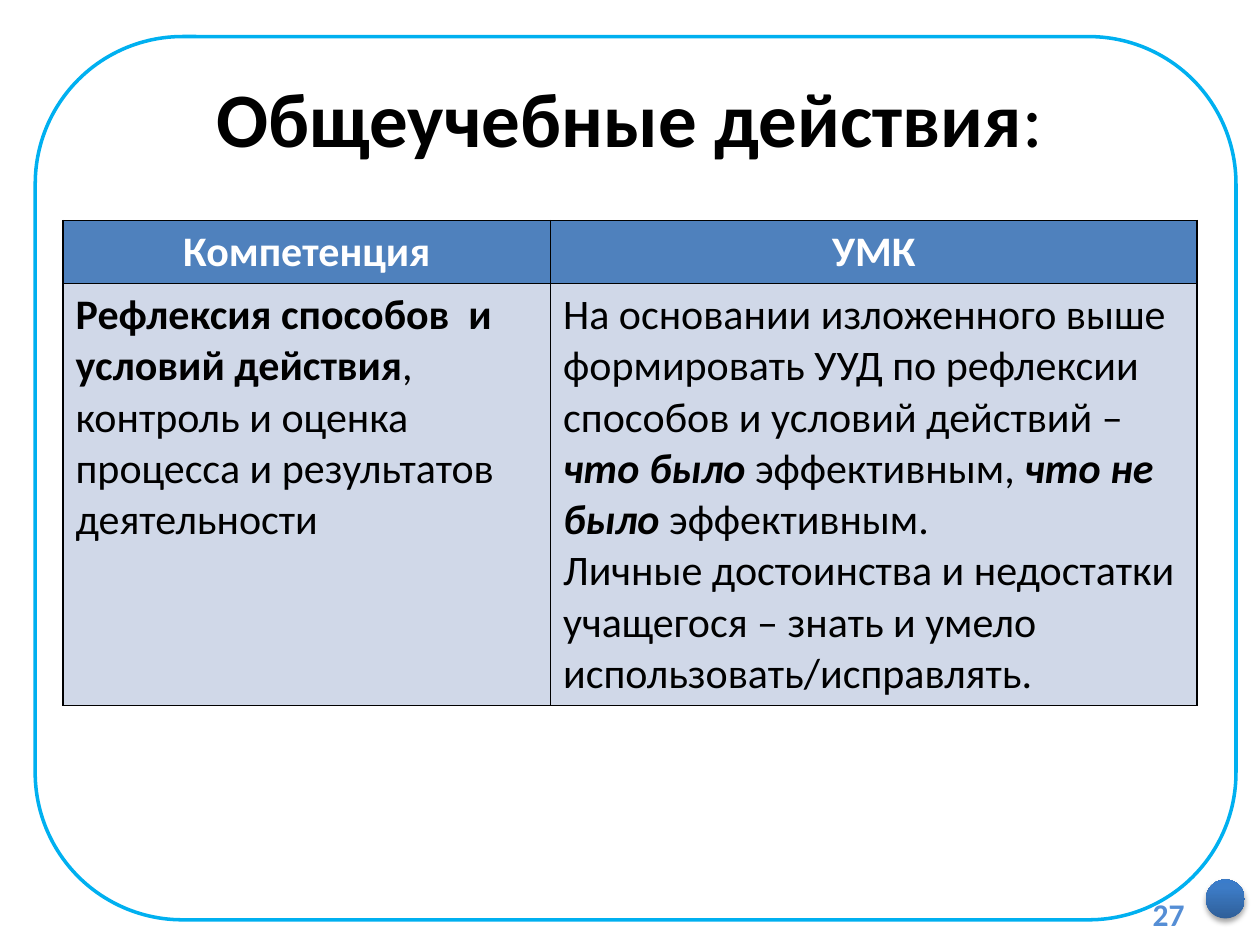
import copy

import pptx
import pptx.chart.data
import pptx.dml.color
import pptx.enum.shapes
import pptx.enum.text
import pptx.oxml
import pptx.oxml.ns
import pptx.util

Inches = pptx.util.Inches
Pt = pptx.util.Pt
ALIGN = pptx.enum.text.PP_ALIGN
ANCHOR = pptx.enum.text.MSO_ANCHOR
SHAPE = pptx.enum.shapes.MSO_SHAPE

THEME = {
    "font": "Calibri",
    "title_size": 44,
    "table_size": 24,
    "number_size": 18,
    "text": "000000",
    "head_text": "FFFFFF",
    "head_fill": "4F81BD",
    "body_fill": "D0D8E8",
    "border": "000000",
    "frame": "00B0F0",
    "number": "558ED5",
    "ball": [(0, "2F5F99"), (0.8, "3D7CC7"), (1, "3A7CCB")],
}
BOLD = {"bold": True}
STRONG = {"bold": True, "italic": True}
PLAIN = {}

TITLE = [[("Общеучебные действия", BOLD), (":", PLAIN)]]
NUMBER = [[("27", BOLD)]]
HEADERS = [
    [[("Компетенция", BOLD)]],
    [[("УМК", BOLD)]],
]
BODY = [
    [[
        ("Рефлексия способов  и условий действия", BOLD),
        (", контроль и оценка процесса и результатов деятельности", PLAIN),
    ]],
    [
        [
            ("На основании изложенного выше формировать УУД по рефлексии "
             "способов и условий действий – ", PLAIN),
            ("что было ", STRONG),
            ("эффективным, ", PLAIN),
            ("что не было ", STRONG),
            ("эффективным.", PLAIN),
        ],
        [("Личные достоинства и недостатки учащегося – знать и умело "
          "использовать/исправлять.", PLAIN)],
    ],
]
ROWS = [
    (HEADERS, "head_fill", "head_text", ALIGN.CENTER),
    (BODY, "body_fill", "text", ALIGN.LEFT),
]
COLUMN_WIDTHS = [3.87, 5.13]
ROW_HEIGHTS = [0.5, 3.35]


def color(name):
    return pptx.dml.color.RGBColor.from_string(THEME[name])


def write(frame, paragraphs, size, ink, align):
    frame.word_wrap = True
    for index, spans in enumerate(paragraphs):
        para = frame.paragraphs[0] if index == 0 else frame.add_paragraph()
        para.alignment = align
        for text, style in spans:
            span = para.add_run()
            span.text = text
            values = {"name": THEME["font"], "size": Pt(THEME[size]),
                      "bold": False, "italic": False, **style}
            for key, value in values.items():
                setattr(span.font, key, value)
            span.font.color.rgb = color(ink)


def add_text(page, area, paragraphs, size, ink, align):
    box = page.shapes.add_textbox(*map(Inches, area))
    box.text_frame.vertical_anchor = ANCHOR.MIDDLE
    write(box.text_frame, paragraphs, size, ink, align)


def add_frame(page):
    frame = page.shapes.add_shape(
        SHAPE.ROUNDED_RECTANGLE, *map(Inches, (0.28, 0.29, 9.53, 7.01)))
    frame.shadow.inherit = False
    frame.fill.background()
    frame.line.color.rgb = color("frame")
    frame.line.width = Pt(2)


def add_ball(page):
    ball = page.shapes.add_shape(
        SHAPE.OVAL, *map(Inches, (9.57, 6.98, 0.31, 0.31)))
    ball.line.fill.background()
    ball.fill.gradient()
    ball.fill.gradient_angle = 90
    first = ball.fill.gradient_stops[0]
    holder = ball.element.spPr.find(".//" + pptx.oxml.ns.qn("a:gsLst"))
    holder.append(copy.deepcopy(holder[0]))
    for stop, (position, code) in zip(ball.fill.gradient_stops, THEME["ball"]):
        stop.position = position
        stop.color.rgb = pptx.dml.color.RGBColor.from_string(code)
    ball.shadow.inherit = False
    effects = ball.element.spPr.find(pptx.oxml.ns.qn("a:effectLst"))
    effects.append(pptx.oxml.parse_xml(
        f'<a:outerShdw {pptx.oxml.ns.nsdecls("a")} blurRad="{Pt(3.1)}" '
        f'dist="{Pt(1.8)}" dir="5400000" rotWithShape="0">'
        '<a:srgbClr val="000000"><a:alpha val="35000"/></a:srgbClr>'
        '</a:outerShdw>'))


def add_borders(cell):
    properties = cell._tc.get_or_add_tcPr()
    for index, side in enumerate(("lnL", "lnR", "lnT", "lnB")):
        properties.insert(index, pptx.oxml.parse_xml(
            f'<a:{side} {pptx.oxml.ns.nsdecls("a")} w="{Pt(1)}">'
            f'<a:solidFill><a:srgbClr val="{THEME["border"]}"/></a:solidFill>'
            f'</a:{side}>'))


def add_grid(page):
    area = (0.5, 1.75, sum(COLUMN_WIDTHS), sum(ROW_HEIGHTS))
    table = page.shapes.add_table(
        len(ROWS), len(COLUMN_WIDTHS), *map(Inches, area)).table
    for column, width in zip(table.columns, COLUMN_WIDTHS):
        column.width = Inches(width)
    for row, height, (contents, fill, ink, align) in zip(
            table.rows, ROW_HEIGHTS, ROWS):
        row.height = Inches(height)
        for cell, paragraphs in zip(row.cells, contents):
            cell.fill.solid()
            cell.fill.fore_color.rgb = color(fill)
            add_borders(cell)
            write(cell.text_frame, paragraphs, "table_size", ink, align)


def main():
    deck = pptx.Presentation()
    deck.slide_width, deck.slide_height = Inches(10), Inches(7.5)
    page = deck.slides.add_slide(deck.slide_layouts[6])
    add_frame(page)
    add_ball(page)
    add_text(page, (0.5, 0.3, 9, 1.25), TITLE, "title_size", "text", ALIGN.CENTER)
    add_grid(page)
    add_text(page, (8.94, 7.05, 0.56, 0.4), NUMBER, "number_size", "number",
             ALIGN.RIGHT)
    deck.save("out.pptx")


if __name__ == "__main__":
    main()
